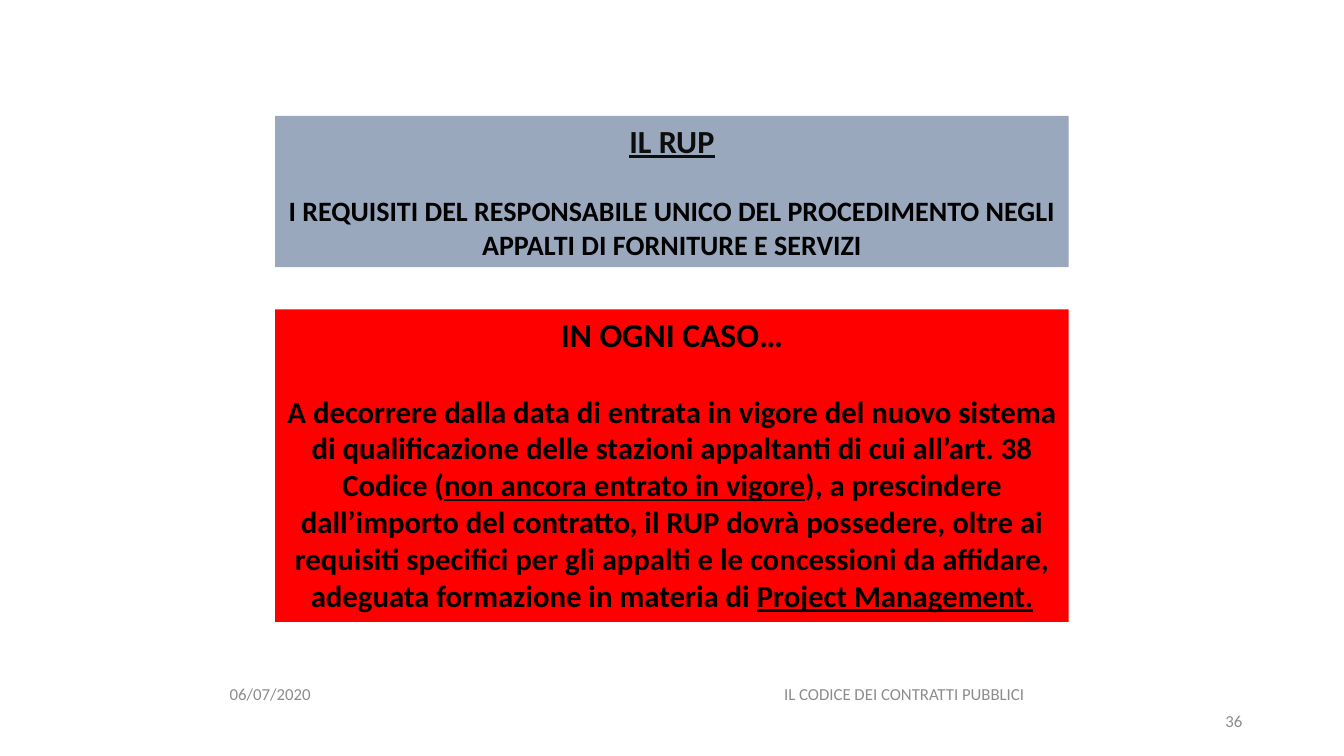
from pptx import Presentation
from pptx.dml.color import RGBColor
from pptx.enum import shapes, text
from pptx.util import Inches, Pt

SLATE = RGBColor(0x99, 0xA8, 0xBD)
RED = RGBColor(0xFF, 0x00, 0x00)
BLACK = RGBColor(0x00, 0x00, 0x00)
NEAR_BLACK = RGBColor(0x0D, 0x0D, 0x0D)
GREY = RGBColor(0x8C, 0x8C, 0x8C)

PANEL_LEFT, PANEL_WIDTH = 2.73, 7.87
FOOTER_HEIGHT = 0.4


def add_run(paragraph, content, size, color=BLACK, bold=True, underline=False):
    run = paragraph.add_run()
    run.text = content
    font = run.font
    font.name, font.size, font.bold = "Calibri", Pt(size), bold
    font.underline = underline
    font.color.rgb = color


def place(shape, left, top, width, height):
    shape.left, shape.top = Inches(left), Inches(top)
    shape.width, shape.height = Inches(width), Inches(height)


def fill_panel(shape, color, box):
    """Format a coloured panel and return its heading and body paragraphs."""
    place(shape, *box)
    shape.fill.solid()
    shape.fill.fore_color.rgb = color
    shape.line.fill.background()
    frame = shape.text_frame
    frame.word_wrap = True
    frame.auto_size = text.MSO_AUTO_SIZE.NONE
    frame.vertical_anchor = text.MSO_ANCHOR.TOP
    heading, body = frame.paragraphs[0], frame.add_paragraph()
    heading.alignment = body.alignment = text.PP_ALIGN.CENTER
    return heading, body


def add_title_panel(slide, box):
    heading, body = fill_panel(slide.shapes.title, SLATE, box)
    add_run(heading, "IL RUP", 23, NEAR_BLACK, underline=True)
    body.space_before = Pt(24.4)
    add_run(body, "I REQUISITI DEL RESPONSABILE UNICO DEL PROCEDIMENTO NEGLI "
                  "APPALTI DI FORNITURE E SERVIZI", 20)


def add_rule_panel(slide, box):
    panel = slide.shapes.add_shape(shapes.MSO_SHAPE.RECTANGLE, 0, 0, 0, 0)
    panel.shadow.inherit = False
    heading, body = fill_panel(panel, RED, box)
    add_run(heading, "IN OGNI CASO…", 24)
    body.space_before = Pt(26.8)
    add_run(body, "A decorrere dalla data di entrata in vigore del nuovo sistema di "
                  "qualificazione delle stazioni appaltanti di cui all’art. 38 Codice (", 22)
    add_run(body, "non ancora entrato in vigore", 22, underline=True)
    add_run(body, "), a prescindere dall’importo del contratto, il RUP dovrà possedere, "
                  "oltre ai requisiti specifici per gli appalti e le concessioni da "
                  "affidare, adeguata formazione in materia di ", 22)
    add_run(body, "Project Management.", 22, underline=True)


def add_footer(slide, content, left, top, width, alignment):
    box = slide.shapes.add_textbox(0, 0, 0, 0)
    place(box, left, top, width, FOOTER_HEIGHT)
    frame = box.text_frame
    frame.word_wrap = True
    frame.vertical_anchor = text.MSO_ANCHOR.MIDDLE
    paragraph = frame.paragraphs[0]
    paragraph.alignment = alignment
    add_run(paragraph, content, 12, GREY, bold=False)


def main():
    presentation = Presentation()
    presentation.slide_width, presentation.slide_height = Inches(13.33), Inches(7.5)
    slide = presentation.slides.add_slide(presentation.slide_layouts[5])

    # Heading and rule panels
    add_title_panel(slide, (PANEL_LEFT, 1.15, PANEL_WIDTH, 1.5))
    add_rule_panel(slide, (PANEL_LEFT, 3.07, PANEL_WIDTH, 3.1))

    # Date, footer and slide number
    align = text.PP_ALIGN
    add_footer(slide, "06/07/2020", 2.18, 6.68, 2.5, align.LEFT)
    add_footer(slide, "IL CODICE DEI CONTRATTI PUBBLICI", 7.14, 6.68, 3.66, align.CENTER)
    add_footer(slide, "36", 9.42, 6.95, 3, align.RIGHT)

    presentation.save("out.pptx")


if __name__ == "__main__":
    main()
